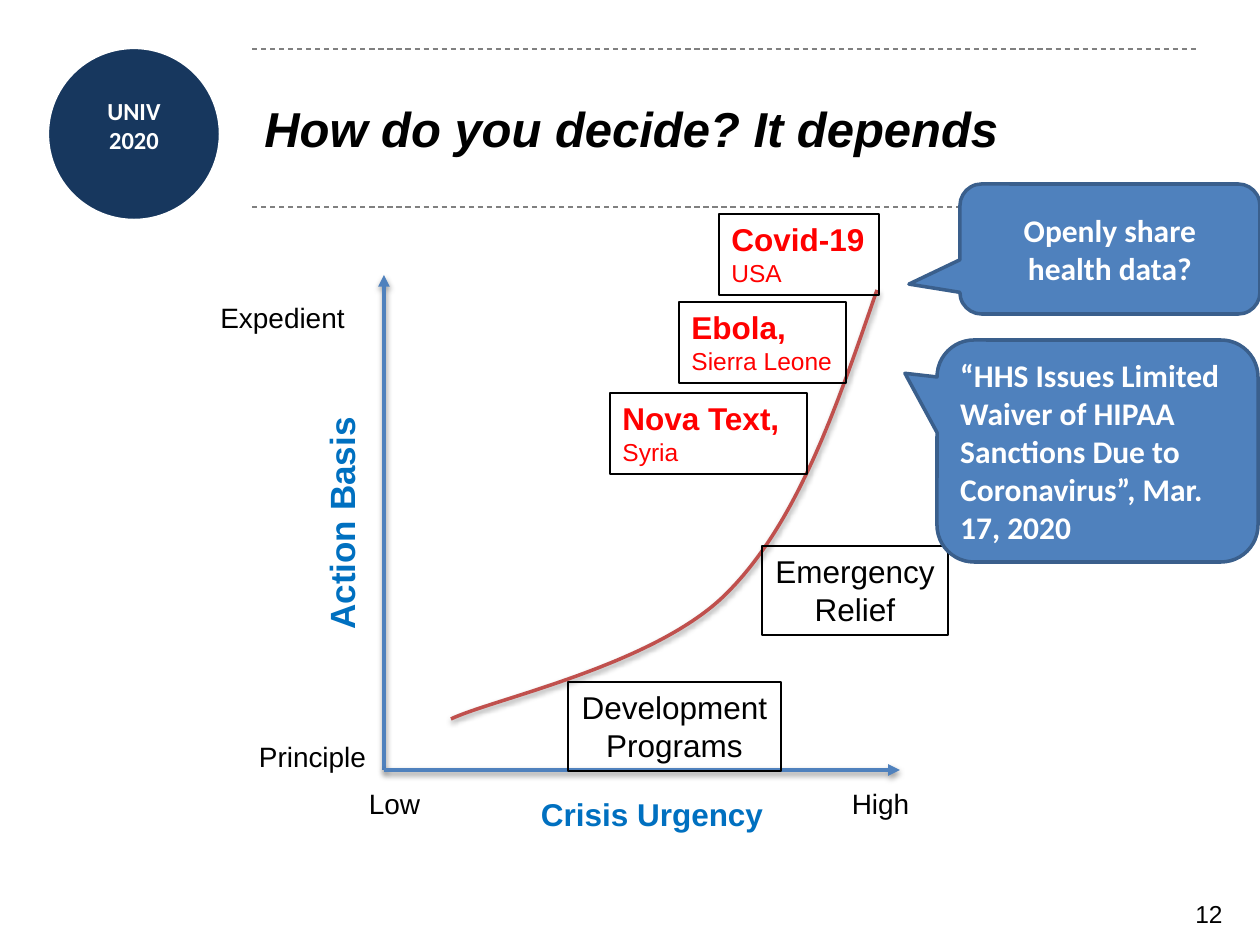
from lxml.etree import SubElement
from pptx import Presentation
from pptx.dml.color import RGBColor
from pptx.enum.dml import MSO_LINE
from pptx.enum.shapes import MSO_CONNECTOR, MSO_SHAPE
from pptx.enum.text import MSO_ANCHOR, MSO_AUTO_SIZE, PP_ALIGN
from pptx.oxml.ns import qn
from pptx.util import Emu, Pt

PX_PER_INCH = 126

WHITE = RGBColor(0xFF, 0xFF, 0xFF)
BLACK = RGBColor(0x00, 0x00, 0x00)
NAVY = RGBColor(0x17, 0x37, 0x5E)
GRAY = RGBColor(0x80, 0x80, 0x80)
BLUE = RGBColor(0x4F, 0x81, 0xBD)
DARK_BLUE = RGBColor(0x3A, 0x5F, 0x8C)
LABEL_BLUE = RGBColor(0x00, 0x70, 0xC0)
BRICK = RGBColor(0xC0, 0x50, 0x4D)
RED = RGBColor(0xFF, 0x00, 0x00)

LEFT, CENTER, RIGHT = PP_ALIGN.LEFT, PP_ALIGN.CENTER, PP_ALIGN.RIGHT


def px(n):
    return Emu(round(n * 914400 / PX_PER_INCH))


def set_text(sp, text, size, color=BLACK, bold=False, italic=False,
             align=CENTER, font="Arial", anchor=MSO_ANCHOR.TOP):
    tf = sp.text_frame
    tf.text = text
    tf.word_wrap = True
    tf.vertical_anchor = anchor
    for p in tf.paragraphs:
        p.alignment = align
        for r in p.runs:
            f = r.font
            f.name, f.size, f.bold, f.italic = font, Pt(size), bold, italic
            f.color.rgb = color
    return tf


def add_label(s, box, text, size, **style):
    sp = s.shapes.add_textbox(*map(px, box))
    set_text(sp, text, size, **style)
    return sp


def add_preset(s, kind, box, fill, line, width):
    sp = s.shapes.add_shape(kind, *map(px, box))
    sp.shadow.inherit = False
    if fill is None:
        sp.fill.background()
    else:
        sp.fill.solid()
        sp.fill.fore_color.rgb = fill
    sp.line.color.rgb = line
    sp.line.width = Pt(width)
    return sp


def add_line(s, x1, y1, x2, y2, color, width):
    line = s.shapes.add_connector(MSO_CONNECTOR.STRAIGHT, px(x1), px(y1), px(x2), px(y2))
    line.line.color.rgb = color
    line.line.width = Pt(width)
    return line


def set_effects(sp, shadow):
    """Replace the theme shadow with a soft drop shadow, or with none."""
    spPr = sp._element.spPr
    effects = SubElement(spPr, qn("a:effectLst"))
    if shadow:
        outer = SubElement(effects, qn("a:outerShdw"), blurRad="40000", dist="20000",
                           dir="5400000", rotWithShape="0")
        clr = SubElement(outer, qn("a:srgbClr"), val="000000")
        SubElement(clr, qn("a:alpha"), val="38000")


def add_badge(s, box):
    x, y, w, h = box
    add_preset(s, MSO_SHAPE.OVAL, box, NAVY, WHITE, 2.5)
    sp = s.shapes.add_textbox(px(x + 7), px(y + 49), px(w - 14), px(59))
    tf = set_text(sp, "UNIV\n2020", 14, WHITE, bold=True, font="Calibri")
    tf.margin_left = tf.margin_top = tf.margin_right = tf.margin_bottom = 0


def add_title_band(s, box):
    x, y, w, h = box
    for line_y in (y, y + h):
        line = add_line(s, x, line_y, x + w, line_y, GRAY, 0.75)
        line.line.dash_style = MSO_LINE.DASH
        set_effects(line, shadow=False)
    add_label(s, box, "How do you decide? It depends", 28, bold=True, italic=True,
              align=LEFT, anchor=MSO_ANCHOR.MIDDLE)


def add_axis(s, x1, y1, x2, y2):
    axis = add_line(s, x1, y1, x2, y2, BLUE, 2.25)
    SubElement(axis.line._get_or_add_ln(), qn("a:tailEnd"), type="triangle")
    set_effects(axis, shadow=True)


def add_curve(s, points):
    """Draw an open Bezier path: a start point, then three points per segment."""
    points = [(px(x), px(y)) for x, y in points]
    builder = s.shapes.build_freeform(*points[0])
    builder.add_line_segments(points[1:], close=False)
    sp = builder.convert_to_shape()
    path = next(sp._element.iter(qn("a:path")))
    segments = path.findall(qn("a:lnTo"))
    for i in range(0, len(segments), 3):
        bezier = SubElement(path, qn("a:cubicBezTo"))
        for segment in segments[i:i + 3]:
            bezier.append(segment[0])
            path.remove(segment)
    sp.fill.background()
    sp.line.color.rgb = BRICK
    sp.line.width = Pt(2)
    set_effects(sp, shadow=True)


def add_example(s, box, text):
    sp = add_preset(s, MSO_SHAPE.RECTANGLE, box, None, BLACK, 0.75)
    tf = set_text(sp, text, 18)
    tf.word_wrap = False
    tf.auto_size = MSO_AUTO_SIZE.SHAPE_TO_FIT_TEXT
    return tf


def add_crisis(s, box, name, place):
    tf = add_example(s, box, f"{name}\n{place}")
    for p, size, bold in zip(tf.paragraphs, (18, 14), (True, False)):
        p.alignment = LEFT
        f = p.runs[0].font
        f.size, f.bold, f.color.rgb = Pt(size), bold, RED


def add_plot(s, box):
    """Draw the axes, curve, labels and examples; box spans the two axes."""
    x, y, w, h = box
    add_axis(s, x, y + h, x, y)
    add_axis(s, x, y + h, x + w, y + h)
    curve = [(493, 15), (453, 131), (414, 247), (343, 318),
             (272, 390), (109, 424), (67, 444)]
    add_curve(s, [(x + dx, y + dy) for dx, dy in curve])

    for dx, dy, text in ((417, 505, "High"), (-69, 505, "Low"),
                         (-151, 458, "Principle"), (-181, 19, "Expedient")):
        add_label(s, (x + dx, y + dy, 159, 47), text, 16)
    add_label(s, (x + 139, y + 514, 258, 50), "Crisis Urgency", 18,
              color=LABEL_BLUE, bold=True)
    sp = add_label(s, (x - 162, y + 221, 239, 55), "Action Basis", 20,
                   color=LABEL_BLUE, bold=True)
    sp.rotation = 270

    for dx, dy, bw, text in ((184, 407, 213, "Development\nPrograms"),
                             (378, 271, 186, "Emergency\nRelief")):
        add_example(s, (x + dx, y + dy, bw, 89), text)
    for dx, dy, bw, name, place in ((335, -61, 160, "Covid-19", "USA"),
                                    (295, 27, 167, "Ebola,", "Sierra Leone"),
                                    (226, 118, 197, "Nova Text,", "Syria")):
        add_crisis(s, (x + dx, y + dy, bw, 81), name, place)


def add_callout(s, box, tip, text, align):
    sp = add_preset(s, MSO_SHAPE.ROUNDED_RECTANGULAR_CALLOUT, box, BLUE, DARK_BLUE, 2)
    sp.adjustments[0], sp.adjustments[1] = tip
    set_text(sp, text, 18, WHITE, bold=True, align=align, font="Calibri",
             anchor=MSO_ANCHOR.MIDDLE)


def main():
    prs = Presentation()
    prs.slide_width, prs.slide_height = px(1260), px(945)
    s = prs.slides.add_slide(prs.slide_layouts[6])
    add_badge(s, (47, 47, 174, 174))
    add_title_band(s, (252, 49, 945, 158))
    add_plot(s, (384, 275, 516, 495))
    add_callout(s, (937, 340, 321, 222), (-0.6, -0.35),
                "“HHS Issues Limited Waiver of HIPAA Sanctions Due to "
                "Coronavirus”, Mar. 17, 2020", LEFT)
    add_callout(s, (960, 184, 300, 130), (-0.67, 0.27), "Openly share health data?", CENTER)
    add_label(s, (1067, 893, 168, 52), "12", 14, align=RIGHT)
    prs.save("out.pptx")


if __name__ == "__main__":
    main()
